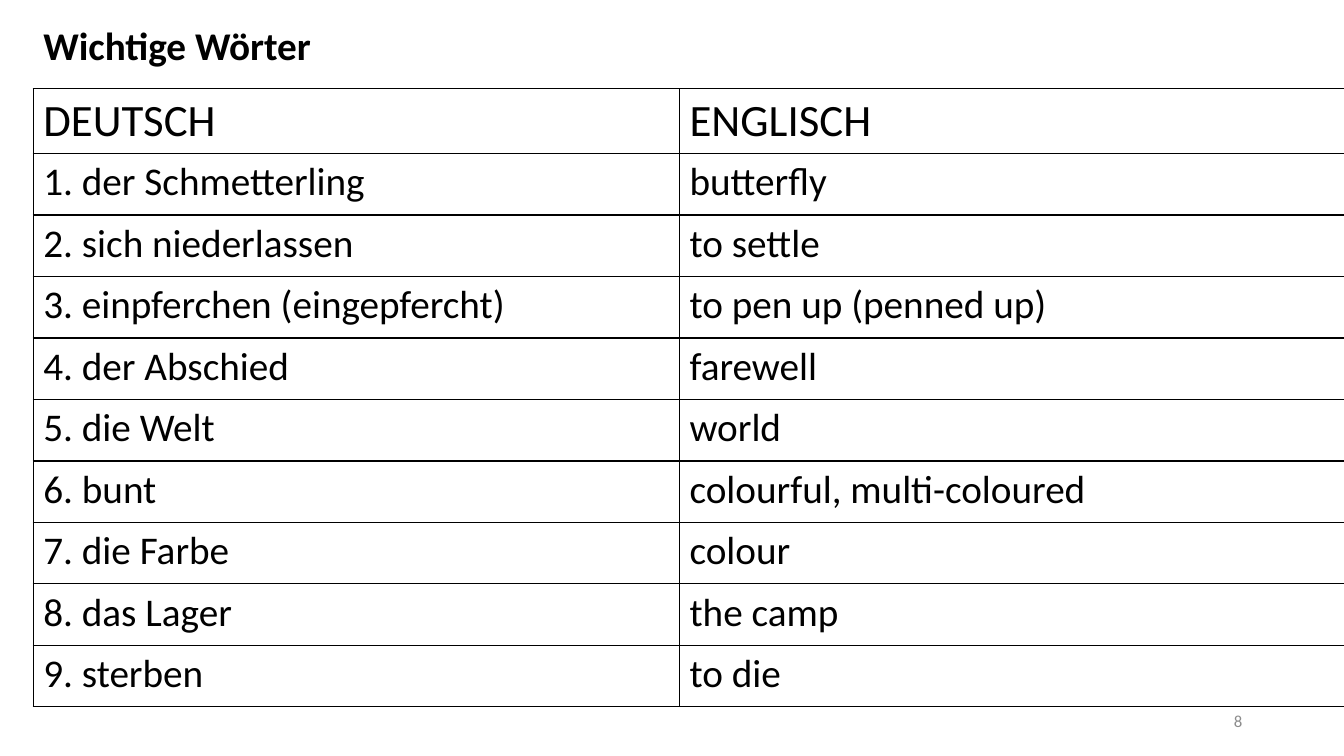
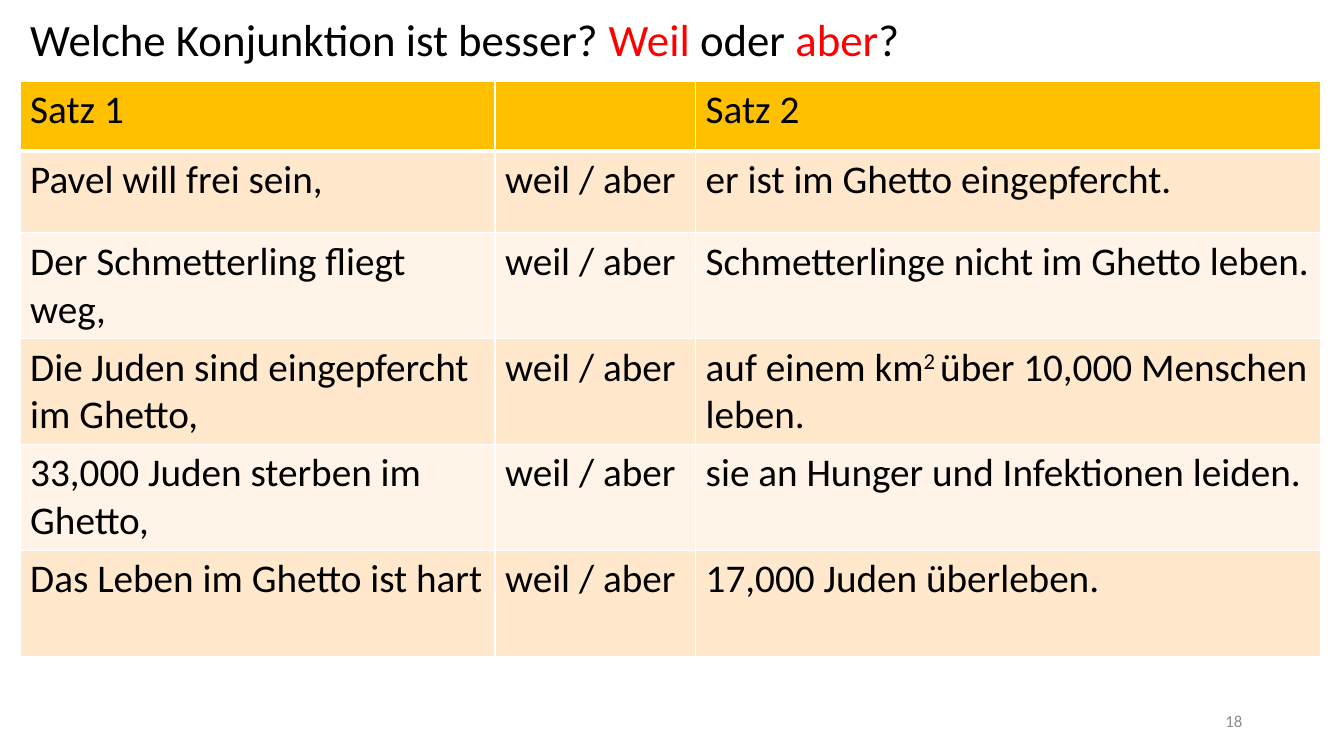
from lxml import etree
from pptx import Presentation
from pptx import util as u
from pptx.dml.color import RGBColor
from pptx.enum import text
from pptx.oxml import ns

FONT = "Calibri"
COLORS = {
    "ink": "000000",
    "accent": "FF0000",
    "number": "8C8C8C",
    "header": "FFC000",
    "band_dark": "FFE8CC",
    "band_light": "FFF4E7",
    "white": "FFFFFF",
}
NUMBER_BOX = (9.42, 6.95, 3, 0.4)
TITLE_ONLY = 5

VOCABULARY = [
    ("DEUTSCH", "ENGLISCH"),
    ("1. der Schmetterling", "butterfly"),
    ("2. sich niederlassen", "to settle"),
    ("3. einpferchen (eingepfercht)", "to pen up (penned up)"),
    ("4. der Abschied", "farewell"),
    ("5. die Welt", "world"),
    ("6. bunt", "colourful, multi-coloured"),
    ("7. die Farbe", "colour"),
    ("8. das Lager", "the camp"),
    ("9. sterben", "to die"),
]

CHOICE = "weil / aber"
# Each run is (text, options for add_run)
AREA_RUNS = [("auf einem km", {}), ("2 ", {"raised": True}),
             ("über 10,000 Menschen leben.", {})]
SENTENCE_PAIRS = [
    ("Pavel will frei sein,", "er ist im Ghetto eingepfercht."),
    ("Der Schmetterling fliegt weg,", "Schmetterlinge nicht im Ghetto leben."),
    ("Die Juden sind eingepfercht im Ghetto,", AREA_RUNS),
    ("33,000 Juden sterben im Ghetto,", "sie an Hunger und Infektionen leiden."),
    ("Das Leben im Ghetto ist hart", "17,000 Juden überleben."),
]


def rgb(name):
    return RGBColor.from_string(COLORS[name])


def inches(box):
    return [u.Inches(length) for length in box]


# Text
def add_run(paragraph, wording, size, color="ink", bold=False, raised=False):
    run = paragraph.add_run()
    run.text = wording
    run.font.name = FONT
    run.font.size = u.Pt(size)
    run.font.bold = bold
    run.font.color.rgb = rgb(color)
    if raised:
        run.font._element.set("baseline", "30000")


def add_runs(paragraph, content, size):
    runs = [(content, {})] if isinstance(content, str) else content
    for wording, options in runs:
        add_run(paragraph, wording, size, **options)


# Shared slide parts
def add_title(slide, box, content, size, spacing=1.0,
              anchor=text.MSO_ANCHOR.MIDDLE):
    title = slide.shapes.title
    title.left, title.top, title.width, title.height = inches(box)
    frame = title.text_frame
    frame.auto_size = text.MSO_AUTO_SIZE.NONE
    frame.word_wrap = True
    frame.vertical_anchor = anchor
    paragraph = frame.paragraphs[0]
    paragraph.alignment = text.PP_ALIGN.LEFT
    paragraph.line_spacing = spacing
    add_runs(paragraph, content, size)


def add_slide_number(slide, number):
    frame = slide.shapes.add_textbox(*inches(NUMBER_BOX)).text_frame
    frame.word_wrap = True
    frame.vertical_anchor = text.MSO_ANCHOR.MIDDLE
    paragraph = frame.paragraphs[0]
    paragraph.alignment = text.PP_ALIGN.RIGHT
    add_run(paragraph, str(number), 12, "number")


# Tables
def set_borders(cell, color, bottom=1):
    properties = cell._tc.get_or_add_tcPr()
    for side, width in (("L", 1), ("R", 1), ("T", 1), ("B", bottom)):
        line = etree.SubElement(properties, ns.qn(f"a:ln{side}"),
                                w=str(u.Pt(width)))
        fill = etree.SubElement(line, ns.qn("a:solidFill"))
        etree.SubElement(fill, ns.qn("a:srgbClr"), val=COLORS[color])


def add_grid(slide, left, top, widths, heights, rows, border,
             header_size=28, header_rule=1, fills=None):
    """fills: header colour followed by the alternating body colours."""
    box = inches((left, top, sum(widths), sum(heights)))
    table = slide.shapes.add_table(len(rows), len(widths), *box).table
    table.first_row = table.horz_banding = False
    for column, width in zip(table.columns, widths):
        column.width = u.Inches(width)
    for r, (contents, height) in enumerate(zip(rows, heights)):
        table.rows[r].height = u.Inches(height)
        is_header = r == 0
        for c, content in enumerate(contents):
            cell = table.cell(r, c)
            set_borders(cell, border, header_rule if is_header else 1)
            if fills:
                header, *bands = fills
                cell.fill.solid()
                cell.fill.fore_color.rgb = rgb(
                    header if is_header else bands[(r - 1) % len(bands)])
            else:
                cell.fill.background()
            if content:
                add_runs(cell.text_frame.paragraphs[0], content,
                         header_size if is_header else 28)


# Slides
def add_vocabulary_slide(deck):
    slide = deck.slides.add_slide(deck.slide_layouts[TITLE_ONLY])
    add_title(slide, (0.33, 0.16, 6.42, 0.57),
              [("Wichtige Wörter", {"bold": True})], 28,
              anchor=text.MSO_ANCHOR.TOP)
    heights = [0.64] + [0.61] * (len(VOCABULARY) - 1)
    add_grid(slide, 0.33, 0.88, (6.41, 6.6), heights, VOCABULARY,
             border="ink", header_size=32)
    add_slide_number(slide, 8)


def add_conjunction_slide(deck):
    slide = deck.slides.add_slide(deck.slide_layouts[TITLE_ONLY])
    red = {"color": "accent"}
    add_title(slide, (0.2, 0.12, 12.73, 0.59),
              [("Welche Konjunktion ist besser? ", {}), ("Weil", red),
               (" oder ", {}), ("aber", red), ("?", {})], 32, spacing=0.9)
    rows = [("Satz 1", "", "Satz 2")]
    rows += [(first, CHOICE, second) for first, second in SENTENCE_PAIRS]
    heights = [0.69, 0.81] + [1.05] * (len(rows) - 2)
    add_grid(slide, 0.2, 0.81, (4.71, 1.99, 6.2), heights, rows,
             border="white", header_rule=3,
             fills=("header", "band_dark", "band_light"))
    add_slide_number(slide, 18)


def main():
    deck = Presentation()
    deck.slide_width, deck.slide_height = inches((13.33, 7.5))
    add_vocabulary_slide(deck)
    add_conjunction_slide(deck)
    deck.save("out.pptx")


if __name__ == "__main__":
    main()
